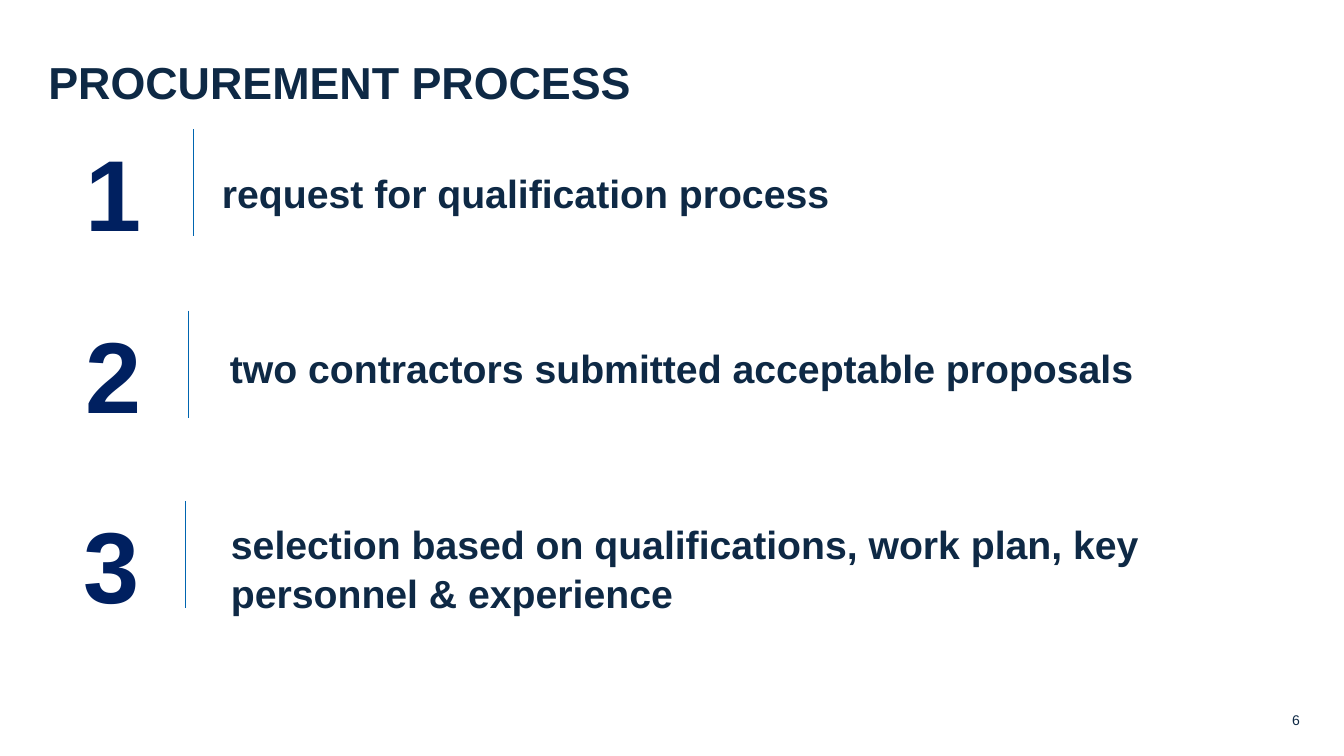
import pptx
import pptx.util
import pptx.dml.color
import pptx.enum.text
import pptx.enum.shapes
import lxml.etree
from dataclasses import dataclass

Cm = pptx.util.Cm
Pt = pptx.util.Pt
Align = pptx.enum.text.PP_ALIGN
Anchor = pptx.enum.text.MSO_ANCHOR


@dataclass(frozen=True)
class Theme:
    face: str = "Arial"
    ink: str = "0E2945"
    navy: str = "002060"
    rule: str = "0065B0"
    head: float = 24
    digit: float = 54
    item: float = 21
    page: float = 7.5
    lead: float = 0.1


@dataclass(frozen=True)
class Box:
    left: float
    top: float
    width: float
    height: float

    def sub(self, dx, dy, width, height):
        return Box(self.left + dx, self.top + dy, width, height)


THEME = Theme()

STEPS = [
    (Box(0.79, 2.16, 23.39, 3.79), 2.72, 2.87, (3.15, 0.84),
     ["request for qualification process"]),
    (Box(0.94, 5.59, 22.89, 2.97), 2.41, 2.62, (3.15, 0.71),
     ["two contractors submitted acceptable proposals"]),
    (Box(0.43, 9.19, 23.98, 3.39), 3.35, 3.08, (3.68, 0.44),
     ["selection based on qualifications, work plan, key",
      "personnel & experience"]),
]


def apply(item, form):
    for name, value in form.items():
        setattr(item, name, value)


def place(shape, box):
    apply(shape, {name: Cm(getattr(box, name))
                  for name in ("left", "top", "width", "height")})


def write(shape, lines, size, color, bold=True, align=Align.LEFT,
          anchor=Anchor.TOP):
    frame = shape.text_frame
    apply(frame, {
        "text": "\n".join(lines),
        "word_wrap": True,
        "auto_size": pptx.enum.text.MSO_AUTO_SIZE.NONE,
        "vertical_anchor": anchor,
    })
    if anchor == Anchor.TOP:
        frame.margin_top = Cm(0.13) + Pt(size * THEME.lead)
    for rank, para in enumerate(frame.paragraphs):
        apply(para, {"alignment": align, "line_spacing": 1.0,
                     "space_before": Pt(1 if rank else 0),
                     "space_after": Pt(0)})
        font = para.runs[0].font
        apply(font, {"name": THEME.face, "size": Pt(size), "bold": bold})
        font.color.rgb = pptx.dml.color.RGBColor.from_string(color)


def plain(shape):
    for para in shape.text_frame.paragraphs:
        prop = para._p.get_or_add_pPr()
        prop.set("marL", "0")
        prop.set("indent", "0")
        lxml.etree.SubElement(prop, pptx.oxml.ns.qn("a:buNone"))


def label(slide, box, *args, **form):
    shape = slide.shapes.add_textbox(0, 0, 0, 0)
    place(shape, box)
    write(shape, *args, **form)


def divide(slide, left, top, height):
    line = slide.shapes.add_connector(
        pptx.enum.shapes.MSO_CONNECTOR.STRAIGHT,
        Cm(left), Cm(top), Cm(left), Cm(top + height))
    line.line.color.rgb = pptx.dml.color.RGBColor.from_string(THEME.rule)
    line.line.width = Pt(0.5)
    lxml.etree.SubElement(line._element.spPr, pptx.oxml.ns.qn("a:effectLst"))


def header(slide, box):
    title = slide.shapes.title
    place(title, box)
    write(title, ["PROCUREMENT PROCESS"], THEME.head, THEME.ink)


def step(slide, body, box, rank, wide, rule, shift, lines):
    label(slide, box.sub(0, 0, wide, 2.57), [str(rank)],
          THEME.digit, THEME.navy, align=Align.CENTER)
    divide(slide, box.left + rule, box.top + 0.28, 2.03)
    dx, dy = shift
    place(body, box.sub(dx, dy, box.width - dx, box.height - dy))
    write(body, lines, THEME.item, THEME.ink)
    plain(body)


def footer(slide, box):
    label(slide, box, ["6"], THEME.page, THEME.ink, bold=False,
          align=Align.RIGHT, anchor=Anchor.MIDDLE)


def main():
    deck = pptx.Presentation()
    apply(deck, {"slide_width": Cm(25.4), "slide_height": Cm(14.29)})
    layout = deck.slide_layouts.get_by_name("Comparison")
    slide = deck.slides.add_slide(layout)
    header(slide, Box(0.66, 0.81, 20.37, 1.27))
    title, *bodies = slide.placeholders
    for rank, (body, row) in enumerate(zip(bodies, STEPS), 1):
        box, *parts = row
        step(slide, body, box, rank, *parts)
    for spare in bodies[len(STEPS):]:
        spare._element.getparent().remove(spare._element)
    footer(slide, Box(19.1, 13.36, 5.72, 0.51))
    deck.save("out.pptx")


if __name__ == "__main__":
    main()
